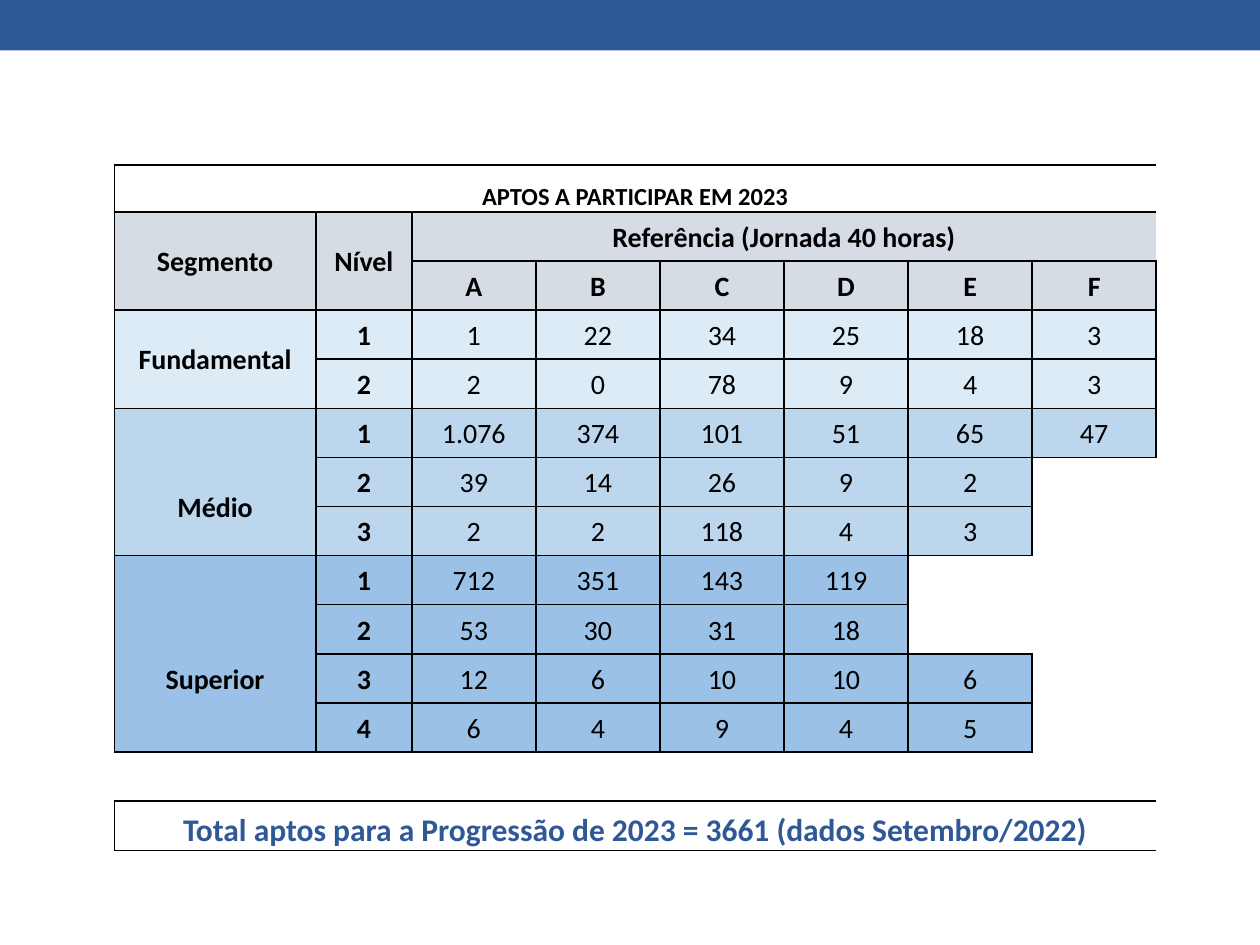
from lxml.etree import SubElement
from pptx import Presentation
from pptx.dml.color import RGBColor as Color
from pptx.enum.shapes import MSO_SHAPE as Shape
from pptx.enum.text import MSO_ANCHOR as Anchor, PP_ALIGN as Align
from pptx.oxml import parse_xml
from pptx.oxml.ns import nsdecls, qn
from pptx.util import Pt

COLORS = {"blue": "2F5897", "black": "000000", "header": "D5DCE3",
          "Fundamental": "DDEBF7", "Médio": "BCD6ED", "Superior": "9BC2E6"}
NO_STYLE = "{2D5ABB26-0587-4C30-8999-92F81FD0307C}"
WIDTHS = [115.2, 54.8] + [70.9] * 6
HEIGHTS = [26.7] + [28.08] * 13
SEGMENTS = {
    "Fundamental": [["1", "22", "34", "25", "18", "3"],
                    ["2", "0", "78", "9", "4", "3"]],
    "Médio": [["1.076", "374", "101", "51", "65", "47"],
              ["39", "14", "26", "9", "2"],
              ["2", "2", "118", "4", "3"]],
    "Superior": [["712", "351", "143", "119"],
                 ["53", "30", "31", "18"],
                 ["12", "6", "10", "10", "6"],
                 ["6", "4", "9", "4", "5"]],
}
LABEL_OFFSETS = {"Fundamental": 0, "Médio": 1, "Superior": 2}


class SlideBuilder:
    """Draw styled elements on the current slide, with lengths in points."""

    def __init__(self, slide, font):
        self.slide = slide
        self.font = font
        self.table = None
        self.blocks = {}

    def banner(self, left, top, width, height, color):
        box = self.slide.shapes.add_shape(
            Shape.RECTANGLE, Pt(left), Pt(top), Pt(width), Pt(height))
        box.shadow.inherit = False
        box.fill.solid()
        box.fill.fore_color.rgb = Color.from_string(COLORS[color])
        box.line.fill.background()

    def grid(self, left, top, widths, heights):
        frame = self.slide.shapes.add_table(
            len(heights), len(widths), Pt(left), Pt(top),
            Pt(sum(widths)), Pt(sum(heights)))
        self.table = frame.table
        self.table.first_row = self.table.horz_banding = False
        frame._element.find(".//" + qn("a:tableStyleId")).text = NO_STYLE
        for column, width in zip(self.table.columns, widths):
            column.width = Pt(width)
        for row, height in zip(self.table.rows, heights):
            row.height = Pt(height)
        for cell in self.table.iter_cells():
            cell.margin_left = cell.margin_right = Pt(3.6)
            cell.margin_top = cell.margin_bottom = 0
            cell.fill.background()

    def merge(self, row, col, rows, cols):
        if rows * cols > 1:
            last = self.table.cell(row + rows - 1, col + cols - 1)
            self.table.cell(row, col).merge(last)

    def block(self, row, col, rows=1, cols=1, fill=None):
        for r in range(row, row + rows):
            for c in range(col, col + cols):
                self.blocks[r, c] = (row, col)
                if fill:
                    cell_fill = self.table.cell(r, c).fill
                    cell_fill.solid()
                    cell_fill.fore_color.rgb = Color.from_string(COLORS[fill])

    def text(self, row, col, text, size=16, bold=True, color="black",
             anchor=Anchor.MIDDLE):
        cell = self.table.cell(row, col)
        cell.vertical_anchor = anchor
        para = cell.text_frame.paragraphs[0]
        para.text = text
        para.alignment = Align.CENTER
        para.line_spacing = 1.07
        font = para.runs[0].font
        font.name, font.size, font.bold = self.font, Pt(size), bold
        font.color.rgb = Color.from_string(COLORS[color])

    def entry(self, row, col, text, rows=1, cols=1, fill=None, **style):
        self.merge(row, col, rows, cols)
        self.block(row, col, rows, cols, fill)
        self.text(row, col, text, **style)

    def borders(self):
        sides = {"lnL": (0, -1), "lnR": (0, 1), "lnT": (-1, 0), "lnB": (1, 0)}
        for row in range(len(self.table.rows)):
            for col in range(len(self.table.columns)):
                props = self.table.cell(row, col)._tc.get_or_add_tcPr()
                own = self.blocks.get((row, col))
                for index, (side, (down, across)) in enumerate(sides.items()):
                    drawn = own != self.blocks.get((row + down, col + across))
                    line = parse_xml(f'<a:{side} {nsdecls("a")} w="12700"/>')
                    if drawn:
                        paint = SubElement(line, qn("a:solidFill"))
                        SubElement(paint, qn("a:srgbClr"), val=COLORS["black"])
                    else:
                        SubElement(line, qn("a:noFill"))
                    props.insert(index, line)


def main():
    deck = Presentation()
    deck.slide_width, deck.slide_height = Pt(720), Pt(540)
    page = SlideBuilder(deck.slides.add_slide(deck.slide_layouts[6]), "Calibri")
    page.banner(0, 0, 720, 28.8, "blue")
    page.grid(65.3, 94.4, WIDTHS, HEIGHTS)

    page.entry(0, 0, "APTOS A PARTICIPAR EM 2023", cols=8, size=14,
               anchor=Anchor.BOTTOM)
    page.entry(1, 0, "Segmento", rows=2, fill="header")
    page.entry(1, 1, "Nível", rows=2, fill="header")
    page.entry(1, 2, "Referência (Jornada 40 horas)", cols=6, fill="header")
    for col, letter in enumerate("ABCDEF", 2):
        page.entry(2, col, letter, fill="header")

    row = 3
    for segment, levels in SEGMENTS.items():
        page.block(row, 0, rows=len(levels), fill=segment)
        page.text(row + LABEL_OFFSETS[segment], 0, segment)
        for level, values in enumerate(levels, 1):
            page.entry(row, 1, str(level), fill=segment)
            for col, value in enumerate(values, 2):
                page.entry(row, col, value, fill=segment, bold=False)
            row += 1
    for top, col in [(3, 0), (6, 0), (8, 6)]:
        page.merge(top, col, 2, 1)

    page.entry(13, 0, "Total aptos para a Progressão de 2023 = 3661 "
               "(dados Setembro/2022)", cols=8, size=18, color="blue",
               anchor=Anchor.BOTTOM)
    page.borders()
    deck.save("out.pptx")


if __name__ == "__main__":
    main()
